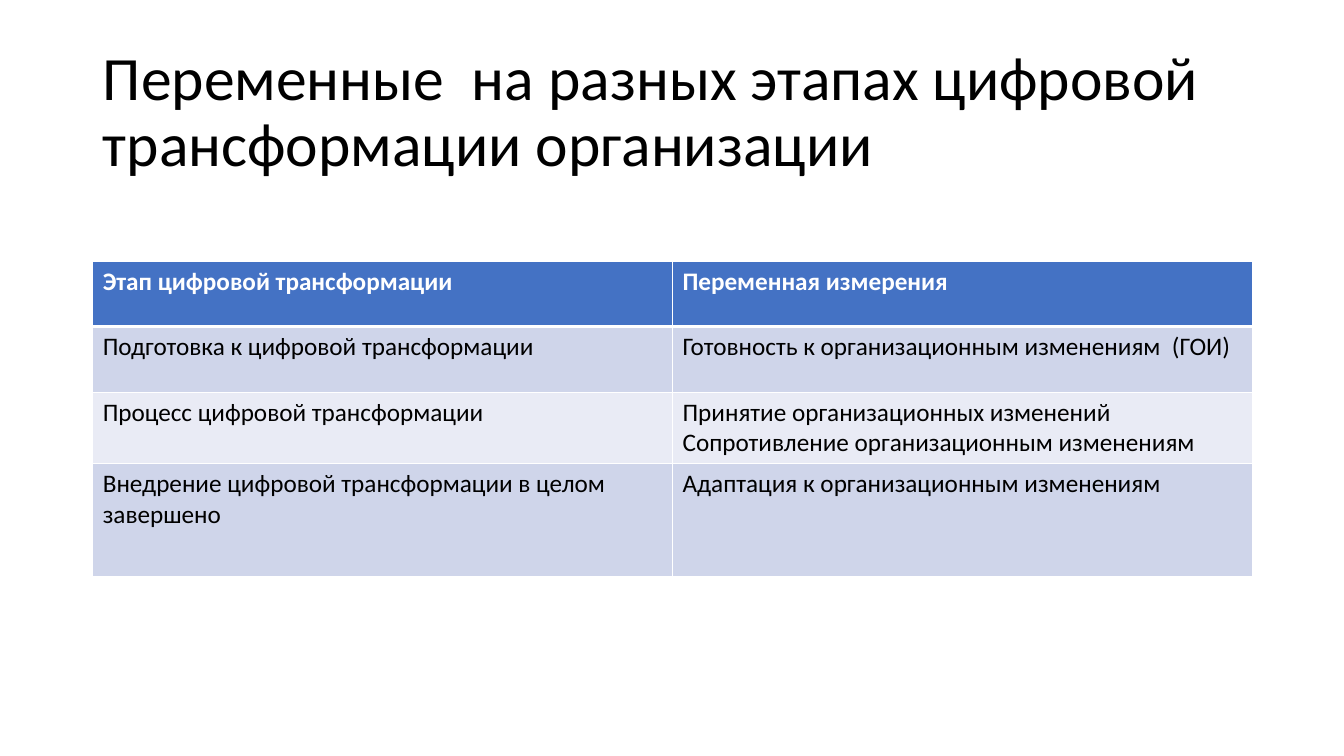
from lxml.etree import SubElement
from pptx import Presentation
from pptx.dml.color import RGBColor
from pptx.enum.text import MSO_ANCHOR, MSO_AUTO_SIZE, PP_ALIGN
from pptx.oxml.ns import qn
from pptx.util import Inches, Pt

TITLE = "Переменные  на разных этапах цифровой трансформации организации"
ROWS = [
    ("Этап цифровой трансформации", "Переменная измерения"),
    ("Подготовка к цифровой трансформации",
     "Готовность к организационным изменениям  (ГОИ)"),
    ("Процесс цифровой трансформации",
     "Принятие организационных изменений\nСопротивление организационным изменениям"),
    ("Внедрение цифровой трансформации в целом завершено",
     "Адаптация к организационным изменениям"),
]
ROW_HEIGHTS = [0.65, 0.65, 0.65, 1.12]


def rgb(value):
    """Turn a hex string into a colour."""
    return RGBColor.from_string(value)


class SlideBuilder:
    """Hold the style and the current slide."""

    font = "Calibri"
    text, white = "000000", "FFFFFF"
    header, bands = "4472C4", ("CFD5EA", "E9EBF5")

    def __init__(self, prs):
        """Add a title-only slide."""
        self.s = prs.slides.add_slide(prs.slide_layouts[5])

    def style(self, tf, size, color, bold=False):
        """Format every run of a text frame."""
        for p in tf.paragraphs:
            for r in p.runs:
                r.font.color.rgb = rgb(color)
                for name, value in dict(name=self.font, size=Pt(size), bold=bold).items():
                    setattr(r.font, name, value)

    def title(self, text, left, top, width, height):
        """Fill and place the title placeholder."""
        sp = self.s.shapes.title
        box = dict(left=left, top=top, width=width, height=height)
        for name, value in box.items():
            setattr(sp, name, Inches(value))
        tf = sp.text_frame
        tf.text = text
        frame = dict(word_wrap=True, auto_size=MSO_AUTO_SIZE.NONE,
                     vertical_anchor=MSO_ANCHOR.MIDDLE)
        for name, value in frame.items():
            setattr(tf, name, value)
        p = tf.paragraphs[0]
        p.alignment, p.line_spacing = PP_ALIGN.LEFT, 0.9
        self.style(tf, 44, self.text)

    def borders(self, cell, widths):
        """Draw white borders of the given point widths."""
        tc_pr = cell._tc.get_or_add_tcPr()
        for side, width in widths.items():
            ln = SubElement(tc_pr, qn(f"a:ln{side}"), w=str(Pt(width)))
            fill = SubElement(ln, qn("a:solidFill"))
            SubElement(fill, qn("a:srgbClr"), val=self.white)

    def table(self, rows, heights, left, top, width):
        """Add a banded table with a header row."""
        box = [Inches(v) for v in (left, top, width, sum(heights))]
        table = self.s.shapes.add_table(len(rows), len(rows[0]), *box).table
        for i, (texts, height) in enumerate(zip(rows, heights)):
            table.rows[i].height = Inches(height)
            head = i == 0
            fill = self.header if head else self.bands[(i - 1) % 2]
            for j, text in enumerate(texts):
                cell = table.cell(i, j)
                cell.text = text
                self.style(cell.text_frame, 18, self.white if head else self.text, head)
                self.borders(cell, dict(L=1, R=1, T=3 if i == 1 else 1, B=3 if head else 1))
                cell.fill.solid()
                cell.fill.fore_color.rgb = rgb(fill)


def main():
    """Build and save the slide."""
    prs = Presentation()
    prs.slide_width, prs.slide_height = Inches(13.33), Inches(7.5)
    slide = SlideBuilder(prs)
    slide.title(TITLE, 0.92, 0.4, 11.5, 1.45)
    slide.table(ROWS, ROW_HEIGHTS, 0.92, 2.59, 11.5)
    prs.save("out.pptx")


if __name__ == "__main__":
    main()
